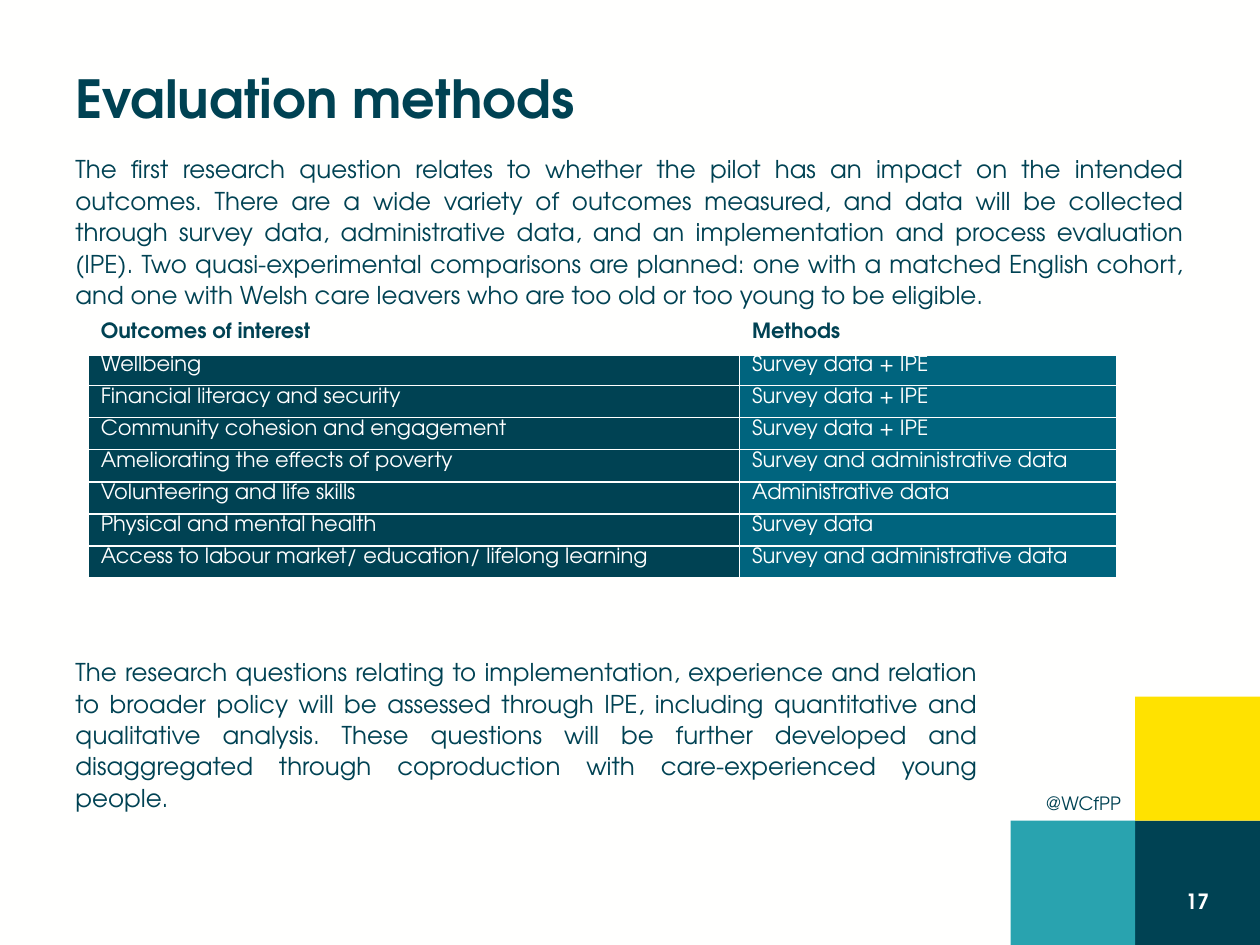
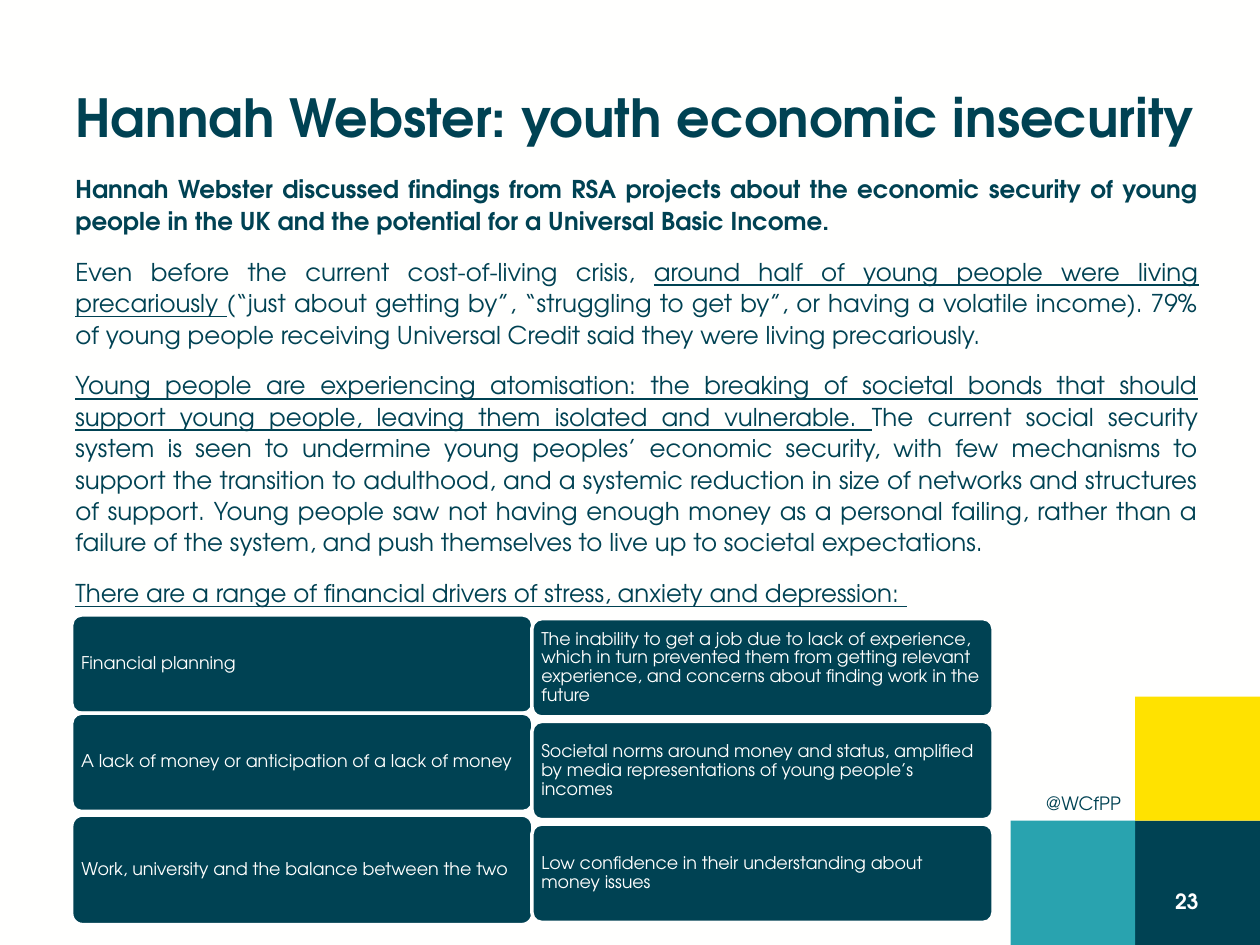
"""Build two slides: the evaluation methods table and the youth insecurity findings."""
from lxml import etree
from pptx import Presentation, util as u
from pptx.dml.color import RGBColor
from pptx.enum import shapes, text
from pptx.oxml.ns import qn

COLORS = {"navy": "004253", "blue": "00647E", "teal": "29A3AF", "yellow": "FFE200",
          "paper": "FFFFFE", "white": "FFFFFF"}
FONT = "TeX Gyre Adventor"
TITLE = {"size": u.Pt(30), "bold": True}
BODY = {"size": u.Pt(14)}
BODY_PARA = {"alignment": text.PP_ALIGN.JUSTIFY, "line_spacing": 1.07, "space_after": u.Pt(8)}
HANDLE = {"size": u.Pt(10.5)}
NUMBER = {"size": u.Pt(12), "bold": True}
MIDDLE = {"vertical_anchor": text.MSO_ANCHOR.MIDDLE}
SIDE_W, SIDE_H = 71.25, 71
SQUARES = [(1, 1, "navy"), (1, 2, "yellow"), (2, 1, "teal")]


def write(tf, paras, font, para={}, color="navy", frame={}):
    """Fill a text frame with paragraphs, each a list of (text, extra font values) runs."""
    for key, value in {"word_wrap": True, **frame}.items():
        setattr(tf, key, value)
    for i, runs in enumerate(paras):
        p = tf.add_paragraph() if i else tf.paragraphs[0]
        extra = {"space_before": u.Pt(3)} if i else {}
        for key, value in {**para, **extra}.items():
            setattr(p, key, value)
        for words, change in runs:
            r = p.add_run()
            r.text = words
            for key, value in {"name": FONT, **font, **change}.items():
                setattr(r.font, key, value)
            r.font.color.rgb = RGBColor.from_string(COLORS[color])


def add_block(s, kind, box, fill, line=None):
    """Add a filled shape, with a 2 pt outline when a line colour is given."""
    sp = s.shapes.add_shape(kind, *map(u.Pt, box))
    sp.shadow.inherit = False
    sp.fill.solid()
    sp.fill.fore_color.rgb = RGBColor.from_string(COLORS[fill])
    if line:
        sp.line.color.rgb = RGBColor.from_string(COLORS[line])
        sp.line.width = u.Pt(2)
    else:
        sp.line.fill.background()
    return sp


prs = Presentation()
prs.slide_width, prs.slide_height = u.Pt(720), u.Pt(540)

pages = [
    {"title": "Evaluation methods", "title_box": (36, 10.8, 648, 90),
     "number": "17", "number_left": 530,
     "body_box": (36, 83.5, 648, 401.8),
     "body": [[("The first research question relates to whether the pilot has an impact on the "
                "intended outcomes. There are a wide variety of outcomes measured, and data will "
                "be collected through survey data, administrative data, and an implementation and "
                "process evaluation (IPE). Two quasi-experimental comparisons are planned: one "
                "with a matched English cohort, and one with Welsh care leavers who are too old "
                "or too young to be eligible.", {})]]},
    {"title": "Hannah Webster: youth economic insecurity", "title_box": (36, 21.6, 684, 90),
     "number": "23", "number_left": 524,
     "body_box": (36, 95, 656, 401.8),
     "body": [
         [("Hannah Webster discussed findings from RSA projects about the economic security of "
           "young people in the UK and the potential for a Universal Basic Income.",
           {"bold": True})],
         [("Even before the current cost-of-living crisis, ", {}),
          ("around half of young people were living precariously ", {"underline": True}),
          ("(“just about getting by”, “struggling to get by”, or having a volatile income). 79% "
           "of young people receiving Universal Credit said they were living precariously.", {})],
         [("Young people are experiencing atomisation: the breaking of societal bonds that should "
           "support young people, leaving them isolated and vulnerable. ", {"underline": True}),
          ("The current social security system is seen to undermine young peoples’ economic "
           "security, with few mechanisms to support the transition to adulthood, and a systemic "
           "reduction in size of networks and structures of support. Young people saw not having "
           "enough money as a personal failing, rather than a failure of the system, and push "
           "themselves to live up to societal expectations.", {})],
         [("There are a range of financial drivers of stress, anxiety and depression: ",
           {"underline": True})]]},
]

for page in pages:
    s = prs.slides.add_slide(prs.slide_layouts[6])
    s.background.fill.solid()
    s.background.fill.fore_color.rgb = RGBColor.from_string(COLORS["paper"])
    for col, row, color in SQUARES:
        add_block(s, shapes.MSO_SHAPE.RECTANGLE,
                  (720 - col * SIDE_W, 540 - row * SIDE_H, SIDE_W, SIDE_H), color)
    for box, paras, font, para, color, frame in [
        ((590.4, 449.3, 58.3, 20.9), [[("@WCfPP", {})]], HANDLE, {}, "navy",
         {"word_wrap": False}),
        (page["title_box"], [[(page["title"], {})]], TITLE, {}, "navy", MIDDLE),
        (page["body_box"], page["body"], BODY, BODY_PARA, "navy", {}),
        ((page["number_left"], 500.4, 168, 28.8), [[(page["number"], {})]], NUMBER,
         {"alignment": text.PP_ALIGN.RIGHT}, "white", MIDDLE),
    ]:
        tb = s.shapes.add_textbox(*map(u.Pt, box))
        write(tb.text_frame, paras, font, para, color, frame)

methods_slide, drivers_slide = prs.slides

outcomes = [
    ("Outcomes of interest", "Methods"),
    ("Wellbeing", "Survey data + IPE"),
    ("Financial literacy and security", "Survey data + IPE"),
    ("Community cohesion and engagement", "Survey data + IPE"),
    ("Ameliorating the effects of poverty", "Survey and administrative data"),
    ("Volunteering and life skills", "Administrative data"),
    ("Physical and mental health", "Survey data"),
    ("Access to labour market/ education/ lifelong learning", "Survey and administrative data"),
]
ROW_H = 18.35
table = methods_slide.shapes.add_table(len(outcomes), 2, u.Pt(50.4), u.Pt(183.6), u.Pt(587.5),
                                       u.Pt(ROW_H * len(outcomes))).table
for column, width in zip(table.columns, (372.25, 215.25)):
    column.width = u.Pt(width)
for i, outcome in enumerate(outcomes):
    table.rows[i].height = u.Pt(ROW_H)
    for j, words in enumerate(outcome):
        cell = table.cell(i, j)
        cell.margin_top, cell.margin_bottom = u.Pt(1.2), 0
        tcPr = cell._tc.get_or_add_tcPr()
        for side in "LRTB":
            thick = (i, side) in [(0, "B"), (1, "T")]
            ln = etree.SubElement(tcPr, qn(f"a:ln{side}"), w=str(u.Pt(3 if thick else 1)))
            solid = etree.SubElement(ln, qn("a:solidFill"))
            etree.SubElement(solid, qn("a:srgbClr"), val=COLORS["paper"])
        if i:
            cell.fill.solid()
            cell.fill.fore_color.rgb = RGBColor.from_string(COLORS[("navy", "blue")[j]])
        else:
            cell.fill.background()
        write(cell.text_frame, [[(words, {})]], {"size": u.Pt(12), "bold": i == 0},
              color=("white", "paper")[j] if i else "navy")

tb = methods_slide.shapes.add_textbox(*map(u.Pt, (36, 370.8, 530, 96.5)))
write(tb.text_frame, [[(
    "The research questions relating to implementation, experience and relation to broader policy "
    "will be assessed through IPE, including quantitative and qualitative analysis. These "
    "questions will be further developed and disaggregated through coproduction with "
    "care-experienced young people.", {})]], BODY, BODY_PARA)

drivers = [
    (41, 351.4, 56.2, "white", "Financial planning"),
    (41, 407.5, 56.2, "white", "A lack of money or anticipation of a lack of money"),
    (41, 465.8, 62.6, "white", "Work, university and the balance between the two"),
    (304, 353.5, 56.2, "paper", "The inability to get a job due to lack of experience, which in "
     "turn prevented them from getting relevant experience, and concerns about finding work in "
     "the future"),
    (304, 412.2, 56.2, "paper", "Societal norms around money and status, amplified by media "
     "representations of young people’s incomes"),
    (304, 470.9, 56.2, "paper", "Low confidence in their understanding about money issues"),
]
insets = {f"margin_{side}": u.Pt(3.7) for side in ("left", "right", "top", "bottom")}
for left, top, height, outline, words in drivers:
    sp = add_block(drivers_slide, shapes.MSO_SHAPE.ROUNDED_RECTANGLE,
                   (left, top, 263.5, height), "navy", outline)
    sp.adjustments[0] = 0.1
    write(sp.text_frame, [[(words, {})]], {"size": u.Pt(10)},
          {"alignment": text.PP_ALIGN.LEFT, "line_spacing": 0.9}, "paper", {**MIDDLE, **insets})

prs.save("out.pptx")
